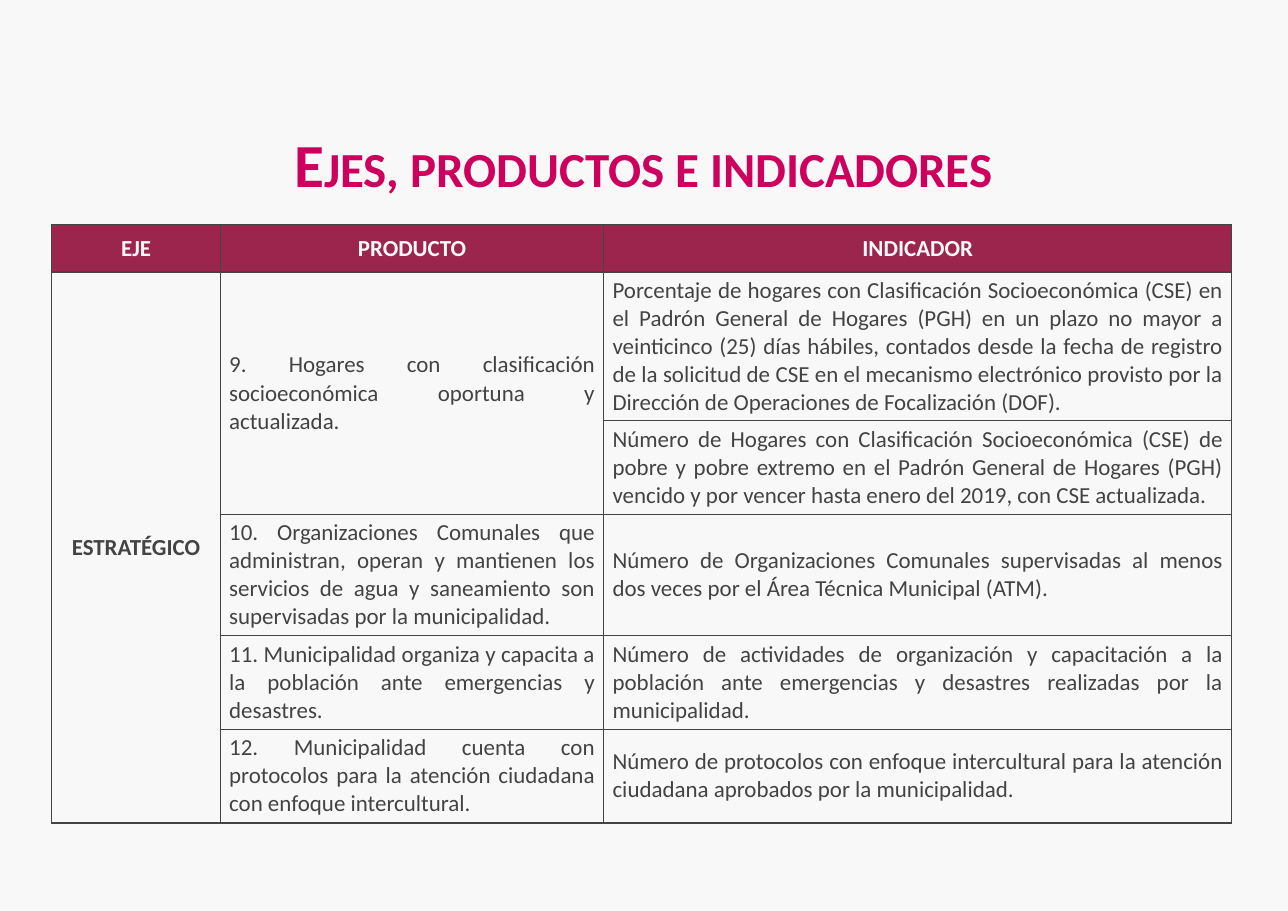
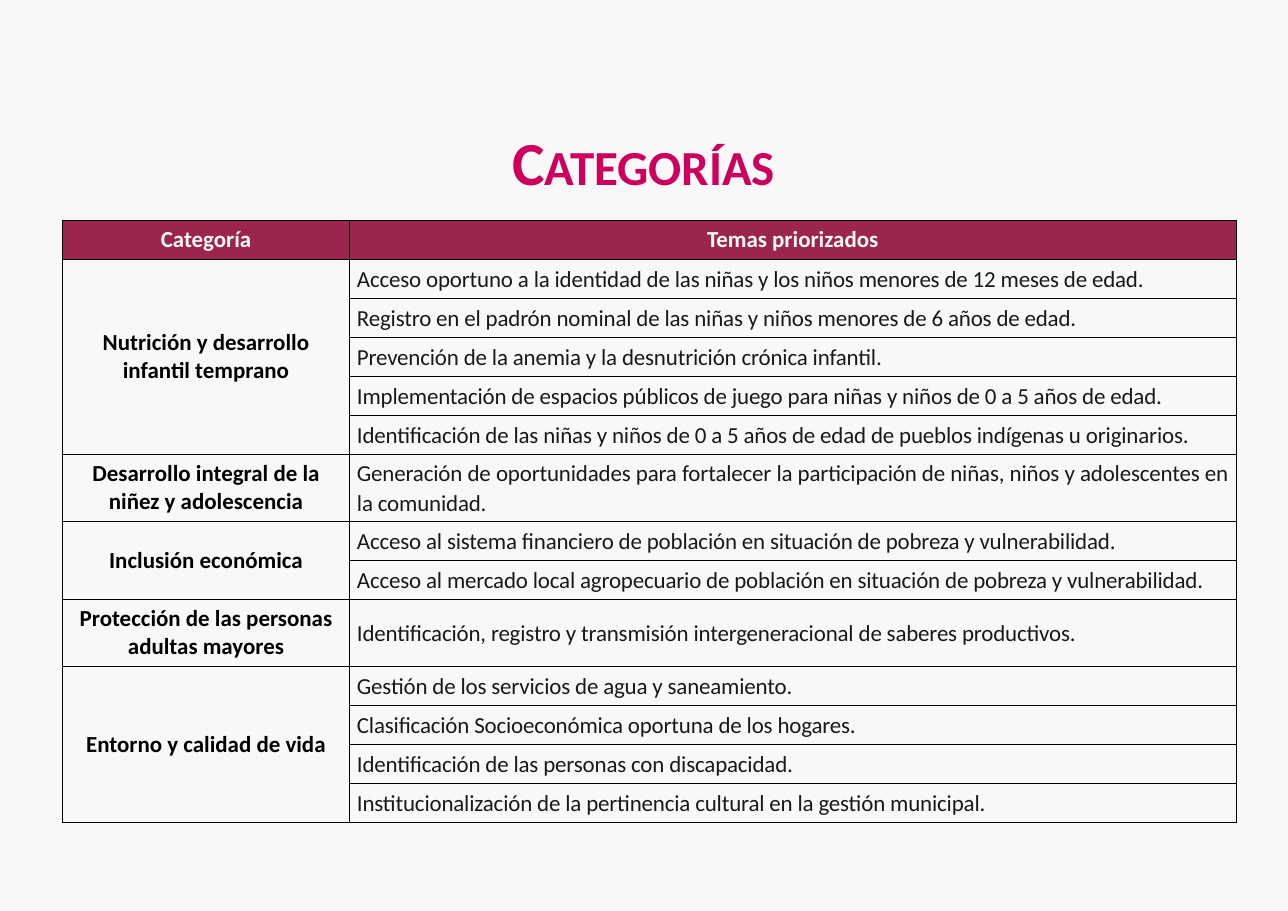
"""Build two slides of municipal programme tables and save them to out.pptx."""
from dataclasses import dataclass
from typing import Any, Optional

from lxml.etree import SubElement
from pptx import Presentation
from pptx.dml.color import RGBColor
from pptx.enum.text import MSO_ANCHOR, PP_ALIGN
from pptx.oxml.ns import qn
from pptx.presentation import Presentation as Deck
from pptx.slide import Slide
from pptx.table import _Cell as Cell
from pptx.text.text import _Paragraph as Paragraph
from pptx.util import Inches, Pt

COLORS = {
    "background": "F8F8F8",
    "title": "CD005D",
    "header": "9C254D",
    "gray": "434343",
    "black": "000000",
    "ink": "191919",
}
FONT = "Calibri"
SLIDE_WIDTH, SLIDE_HEIGHT = 11.69, 8.27
TITLE_LEFT, TITLE_WIDTH = 0.8, 10.08
TOPIC_ROW, TALL_ROW = 4.25 / 12, 0.61


@dataclass(frozen=True)
class TextStyle:
    """Look of the text in a title or a table cell."""

    color: str
    bold: bool = False
    size: float = 15
    alignment: PP_ALIGN = PP_ALIGN.CENTER
    line_spacing: Optional[float] = None
    run_attributes: tuple[tuple[str, str], ...] = ()


@dataclass(frozen=True)
class ColumnStyle:
    """Width, text style and side and end margins of a table column."""

    width: float
    text: TextStyle
    side_margin: float
    end_margin: float


@dataclass(frozen=True)
class TableSlide:
    """Content of one slide; None in a row continues the cell above it."""

    title: str
    title_top: float
    title_height: float
    table_left: float
    table_top: float
    border: str
    columns: list[ColumnStyle]
    heights: list[float]
    rows: list[list[Optional[str]]]


TITLE_STYLE = TextStyle("title", True, 40, line_spacing=0.9, run_attributes=(("cap", "small"),))
HEADER_STYLE = TextStyle("background", True)
GRAY_JUSTIFIED = TextStyle("gray", alignment=PP_ALIGN.JUSTIFY)
TOPIC_STYLE = TextStyle("ink", False, 15, PP_ALIGN.JUSTIFY, 1.07, (("spc", "-10"),))

SLIDES = [
    TableSlide(
        title="Ejes, productos e indicadores",
        title_top=1.01,
        title_height=1.03,
        table_left=0.47,
        table_top=2.04,
        border="gray",
        columns=[
            ColumnStyle(1.53, TextStyle("gray", True), 0.08, 0.04),
            ColumnStyle(3.48, GRAY_JUSTIFIED, 0.08, 0.04),
            ColumnStyle(5.7, GRAY_JUSTIFIED, 0.08, 0.04),
        ],
        heights=[0.43, 1.35, 0.85, 1.1, 0.85, 0.85],
        rows=[
            ["EJE", "PRODUCTO", "INDICADOR"],
            [
                "ESTRATÉGICO",
                "9. Hogares con clasificación socioeconómica oportuna y actualizada.",
                "Porcentaje de hogares con Clasificación Socioeconómica (CSE) en el Padrón General "
                "de Hogares (PGH) en un plazo no mayor a veinticinco (25) días hábiles, contados "
                "desde la fecha de registro de la solicitud de CSE en el mecanismo electrónico "
                "provisto por la Dirección de Operaciones de Focalización (DOF).",
            ],
            [
                None,
                None,
                "Número de Hogares con Clasificación Socioeconómica (CSE) de pobre y pobre extremo "
                "en el Padrón General de Hogares (PGH) vencido y por vencer hasta enero del 2019, "
                "con CSE actualizada.",
            ],
            [
                None,
                "10. Organizaciones Comunales que administran, operan y mantienen los servicios "
                "de agua y saneamiento son supervisadas por la municipalidad.",
                "Número de Organizaciones Comunales supervisadas al menos dos veces por el Área "
                "Técnica Municipal (ATM).",
            ],
            [
                None,
                "11. Municipalidad organiza y capacita a la población ante emergencias y desastres.",
                "Número de actividades de organización y capacitación a la población ante "
                "emergencias y desastres realizadas por la municipalidad.",
            ],
            [
                None,
                "12. Municipalidad cuenta con protocolos para la atención ciudadana con enfoque "
                "intercultural.",
                "Número de protocolos con enfoque intercultural para la atención ciudadana "
                "aprobados por la municipalidad.",
            ],
        ],
    ),
    TableSlide(
        title="Categorías",
        title_top=0.97,
        title_height=1.07,
        table_left=0.57,
        table_top=2,
        border="black",
        columns=[
            ColumnStyle(2.6, TextStyle("black", True), 0.1, 0.05),
            ColumnStyle(8.05, TOPIC_STYLE, 0.07, 0),
        ],
        heights=[TOPIC_ROW] * 6 + [TALL_ROW] + [TOPIC_ROW] * 2 + [TALL_ROW] + [TOPIC_ROW] * 4,
        rows=[
            ["Categoría", "Temas priorizados"],
            [
                "Nutrición y desarrollo infantil temprano",
                "Acceso oportuno a la identidad de las niñas y los niños menores de 12 meses de edad.",
            ],
            [None, "Registro en el padrón nominal de las niñas y niños menores de 6 años de edad."],
            [None, "Prevención de la anemia y la desnutrición crónica infantil."],
            [
                None,
                "Implementación de espacios públicos de juego para niñas y niños de 0 a 5 años de edad.",
            ],
            [
                None,
                "Identificación de las niñas y niños de 0 a 5 años de edad de pueblos indígenas "
                "u originarios.",
            ],
            [
                "Desarrollo integral de la niñez y adolescencia",
                "Generación de oportunidades para fortalecer la participación de niñas, niños y "
                "adolescentes en la comunidad.",
            ],
            [
                "Inclusión económica",
                "Acceso al sistema financiero de población en situación de pobreza y vulnerabilidad.",
            ],
            [
                None,
                "Acceso al mercado local agropecuario de población en situación de pobreza y "
                "vulnerabilidad.",
            ],
            [
                "Protección de las personas adultas mayores",
                "Identificación, registro y transmisión intergeneracional de saberes productivos.",
            ],
            ["Entorno y calidad de vida", "Gestión de los servicios de agua y saneamiento."],
            [None, "Clasificación Socioeconómica oportuna de los hogares."],
            [None, "Identificación de las personas con discapacidad."],
            [None, "Institucionalización de la pertinencia cultural en la gestión municipal."],
        ],
    ),
]


def rgb(name: str) -> RGBColor:
    """Return the named colour."""
    return RGBColor.from_string(COLORS[name])


def set_attributes(target: Any, values: dict[str, Any]) -> None:
    """Set every attribute in the dict on the target."""
    for name, value in values.items():
        setattr(target, name, value)


def write_text(paragraph: Paragraph, text: str, style: TextStyle) -> None:
    """Write one styled run into a paragraph."""
    set_attributes(paragraph, {"alignment": style.alignment, "line_spacing": style.line_spacing})
    run = paragraph.add_run()
    run.text = text
    set_attributes(run.font, {"name": FONT, "size": Pt(style.size), "bold": style.bold})
    run.font.color.rgb = rgb(style.color)
    for name, value in style.run_attributes:
        run.font._element.set(name, value)


def add_borders(cell: Cell, color: str) -> None:
    """Draw a one-point line on all four sides of a cell."""
    properties = cell._tc.get_or_add_tcPr()
    for side in ("lnL", "lnR", "lnT", "lnB"):
        line = SubElement(properties, qn(f"a:{side}"), w=str(Pt(1)))
        fill = SubElement(line, qn("a:solidFill"))
        SubElement(fill, qn("a:srgbClr"), val=COLORS[color])


def format_cell(cell: Cell, column: ColumnStyle, border: str, is_header: bool) -> None:
    """Set the margins, borders and fill of a cell."""
    side, end = Inches(column.side_margin), Inches(column.end_margin)
    set_attributes(cell, {
        "margin_left": side,
        "margin_right": side,
        "margin_top": end,
        "margin_bottom": end,
        "vertical_anchor": MSO_ANCHOR.MIDDLE,
    })
    add_borders(cell, border)
    if is_header:
        cell.fill.solid()
        cell.fill.fore_color.rgb = rgb("header")
    else:
        cell.fill.background()


def add_title(slide: Slide, content: TableSlide) -> None:
    """Add the centred small-caps title."""
    shape = slide.shapes.add_textbox(
        Inches(TITLE_LEFT), Inches(content.title_top),
        Inches(TITLE_WIDTH), Inches(content.title_height),
    )
    set_attributes(shape.text_frame, {"word_wrap": True, "vertical_anchor": MSO_ANCHOR.MIDDLE})
    write_text(shape.text_frame.paragraphs[0], content.title, TITLE_STYLE)


def add_content_table(slide: Slide, content: TableSlide) -> None:
    """Add the table and merge each cell with the empty ones below it."""
    row_count = len(content.rows)
    table = slide.shapes.add_table(
        row_count, len(content.columns),
        Inches(content.table_left), Inches(content.table_top),
        Inches(sum(column.width for column in content.columns)), Inches(sum(content.heights)),
    ).table
    set_attributes(table, {"first_row": False, "horz_banding": False})
    for row, height in zip(table.rows, content.heights):
        row.height = Inches(height)
    for column_index, column in enumerate(content.columns):
        table.columns[column_index].width = Inches(column.width)
        start = 0
        for row_index, row_texts in enumerate(content.rows):
            cell = table.cell(row_index, column_index)
            format_cell(cell, column, content.border, row_index == 0)
            text = row_texts[column_index]
            if text is not None:
                start = row_index
                style = column.text if row_index else HEADER_STYLE
                write_text(cell.text_frame.paragraphs[0], text, style)
            is_last = row_index + 1 == row_count or content.rows[row_index + 1][column_index] is not None
            if is_last and start < row_index:
                table.cell(start, column_index).merge(cell)


def add_table_slide(presentation: Deck, content: TableSlide) -> None:
    """Add one slide with its background, title and table."""
    slide = presentation.slides.add_slide(presentation.slide_layouts[6])
    slide.background.fill.solid()
    slide.background.fill.fore_color.rgb = rgb("background")
    add_title(slide, content)
    add_content_table(slide, content)


def main() -> None:
    """Build and save the presentation."""
    presentation = Presentation()
    set_attributes(presentation, {
        "slide_width": Inches(SLIDE_WIDTH),
        "slide_height": Inches(SLIDE_HEIGHT),
    })
    for content in SLIDES:
        add_table_slide(presentation, content)
    presentation.save("out.pptx")


if __name__ == "__main__":
    main()
